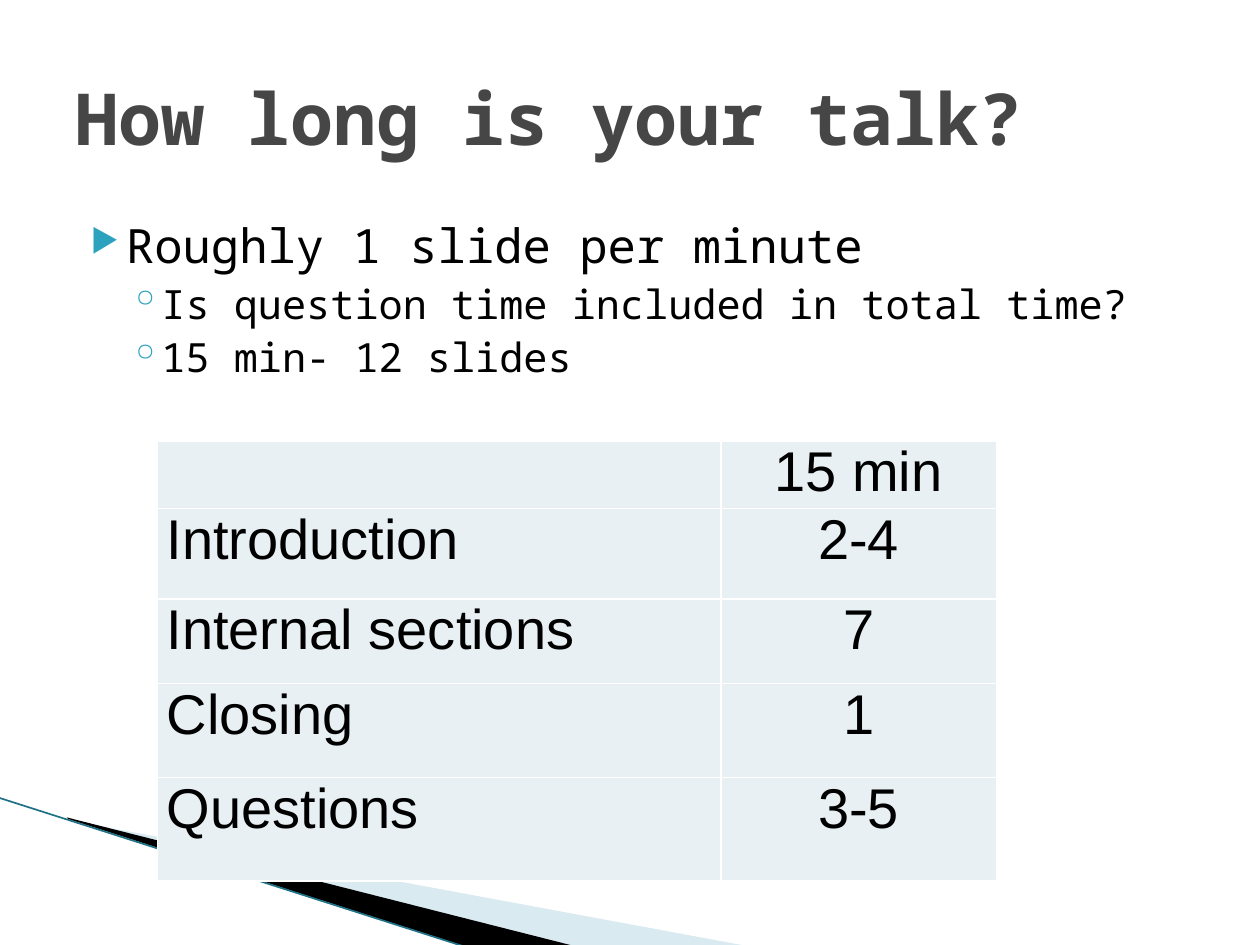
from lxml import etree
from pptx import Presentation
from pptx import util as u
from pptx.dml.color import RGBColor
from pptx.enum import shapes, text
from pptx.oxml import ns

COLORS = {
    "title": "464646", "body": "000000", "bullet": "2DA2BF",
    "cell": "E8F0F4", "border": "FFFFFF",
    "pale_wedge": "A0CBDC", "dark_wedge": "000000", "edge": "1F7185",
}
BODY_FONT, TABLE_FONT = "Noto Sans Mono", "Arial"

# Per outline level: left margin and hanging indent in cm, then points and percent
LEVELS = [
    {"margin": 1.02, "hang": 0.71, "size": 27, "before": 4, "mark": "▶", "mark_size": 68},
    {"margin": 1.73, "hang": 0.64, "size": 23, "before": 3.2, "mark": "◦", "mark_size": 100},
]
OUTLINE = [
    (0, "Roughly 1 slide per minute"),
    (1, "Is question time included in total time?"),
    (1, "15 min- 12 slides"),
]
SCHEDULE = [
    ("", "15 min"),
    ("Introduction", "2-4"),
    ("Internal sections", "7"),
    ("Closing", "1"),
    ("Questions", "3-5"),
]
COLUMN_WIDTHS = [11.35, 5.56]
ROW_HEIGHTS = [0.94, 1.83, 1.7, 1.9, 2.08]


def rgb(name):
    return RGBColor.from_string(COLORS[name])


def add_child(parent, tag, **attributes):
    child = etree.SubElement(parent, ns.qn(tag))
    for key, value in attributes.items():
        child.set(key, str(value))
    return child


def apply(target, formats):
    for key, value in formats.items():
        setattr(target, key, value)


def add_run(paragraph, words, color, **formats):
    run = paragraph.add_run()
    run.text = words
    apply(run.font, formats)
    run.font.color.rgb = rgb(color)


def add_wedge(slide, points, color, opacity=100):
    corners = [(u.Cm(x), u.Cm(y)) for x, y in points]
    builder = slide.shapes.build_freeform(*corners[0], scale=1.0)
    builder.add_line_segments(corners[1:], close=True)
    wedge = builder.convert_to_shape()
    wedge.shadow.inherit = False
    wedge.line.fill.background()
    wedge.fill.solid()
    wedge.fill.fore_color.rgb = rgb(color)
    if opacity < 100:
        tint = wedge.fill._xPr.find(".//" + ns.qn("a:srgbClr"))
        add_child(tint, "a:alpha", val=opacity * 1000)


def add_edge(slide, start, end):
    edge = slide.shapes.add_connector(
        shapes.MSO_CONNECTOR.STRAIGHT, *map(u.Cm, start + end))
    edge.line.color.rgb = rgb("edge")
    edge.line.width = u.Pt(0.95)
    add_child(edge._element.spPr, "a:effectLst")


def add_frame(slide, box, anchor):
    frame = slide.shapes.add_textbox(*map(u.Cm, box)).text_frame
    apply(frame, {"word_wrap": True, "vertical_anchor": anchor})
    return frame


def add_title(slide, words):
    frame = add_frame(slide, (1.27, 0.76, 22.86, 3.18), text.MSO_ANCHOR.MIDDLE)
    add_run(frame.paragraphs[0], words, "title",
            name=BODY_FONT, size=u.Pt(41), bold=True)


def add_bullet(paragraph, level):
    properties = paragraph._p.get_or_add_pPr()
    properties.set("marL", str(u.Cm(level["margin"])))
    properties.set("indent", str(-u.Cm(level["hang"])))
    add_child(add_child(properties, "a:buClr"), "a:srgbClr", val=COLORS["bullet"])
    add_child(properties, "a:buSzPct", val=level["mark_size"] * 1000)
    add_child(properties, "a:buChar", char=level["mark"])


def add_outline(slide):
    frame = add_frame(slide, (1.27, 4.24, 22.86, 12.57), text.MSO_ANCHOR.TOP)
    for index, (depth, words) in enumerate(OUTLINE):
        level = LEVELS[depth]
        paragraph = frame.add_paragraph() if index else frame.paragraphs[0]
        paragraph.level = depth
        add_bullet(paragraph, level)
        if index:
            paragraph.space_before = u.Pt(level["before"])
        add_run(paragraph, words, "body", name=BODY_FONT, size=u.Pt(level["size"]))


def format_cell(cell):
    apply(cell, {"margin_left": u.Cm(0.18), "margin_right": u.Cm(0.18),
                 "margin_top": 0, "margin_bottom": 0})
    properties = cell._tc.get_or_add_tcPr()
    for side in ("a:lnL", "a:lnR", "a:lnT", "a:lnB"):
        border = add_child(properties, side, w=u.Pt(1))
        add_child(add_child(border, "a:solidFill"), "a:srgbClr", val=COLORS["border"])
    cell.fill.solid()
    cell.fill.fore_color.rgb = rgb("cell")


def add_schedule(slide):
    box = (3.18, 8.89, sum(COLUMN_WIDTHS), sum(ROW_HEIGHTS))
    table = slide.shapes.add_table(
        len(ROW_HEIGHTS), len(COLUMN_WIDTHS), *map(u.Cm, box)).table
    for column, width in zip(table.columns, COLUMN_WIDTHS):
        column.width = u.Cm(width)
    for row, height, entries in zip(table.rows, ROW_HEIGHTS, SCHEDULE):
        row.height = u.Cm(height)
        alignments = (text.PP_ALIGN.LEFT, text.PP_ALIGN.CENTER)
        for cell, words, alignment in zip(row.cells, entries, alignments):
            format_cell(cell)
            paragraph = cell.text_frame.paragraphs[0]
            paragraph.alignment = alignment
            if words:
                add_run(paragraph, words, "body",
                        name=TABLE_FONT, size=u.Pt(32), bold=False)


def main():
    deck = Presentation()
    apply(deck, {"slide_width": u.Cm(25.4), "slide_height": u.Cm(19.05)})
    slide = deck.slides.add_slide(deck.slide_layouts[6])
    add_wedge(slide, [(1.4, 16.54), (15.11, 19.08), (11.58, 19.08), (1.4, 16.51)],
              "pale_wedge", opacity=40)
    add_wedge(slide, [(1.35, 16.48), (11.61, 19.08), (9.45, 19.1), (1.37, 16.51)],
              "dark_wedge")
    add_edge(slide, (-0.03, 16.08), (9.42, 19.1))
    add_outline(slide)
    add_title(slide, "How long is your talk?")
    add_schedule(slide)
    deck.save("out.pptx")


if __name__ == "__main__":
    main()
